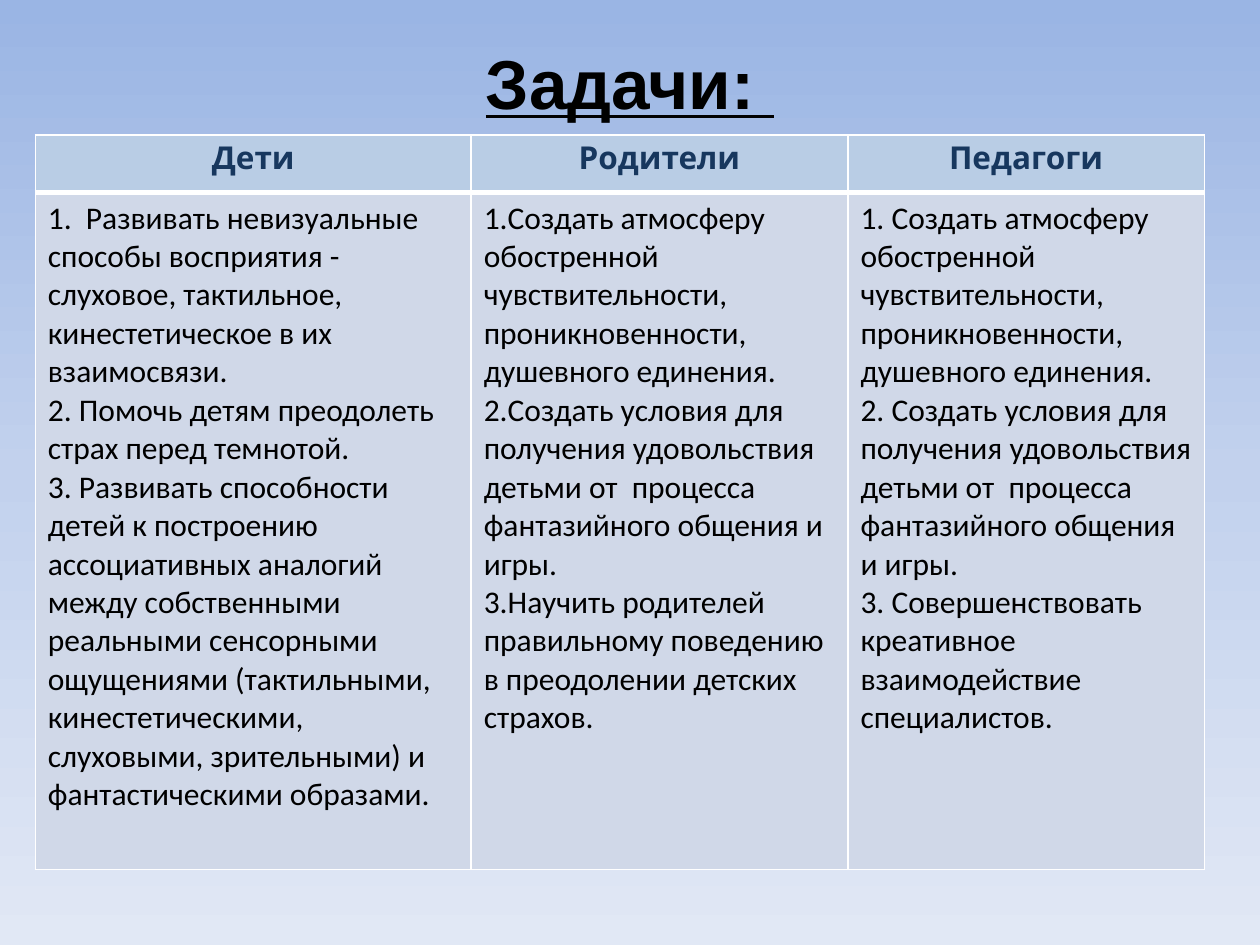
from copy import deepcopy
from dataclasses import dataclass

from lxml import etree
from pptx import Presentation
from pptx.dml.color import RGBColor
from pptx.enum.text import MSO_ANCHOR, PP_ALIGN
from pptx.oxml.ns import qn
from pptx.slide import Slide
from pptx.table import _Cell
from pptx.text.text import _Paragraph
from pptx.util import Inches, Pt

CENTER, LEFT = PP_ALIGN.CENTER, PP_ALIGN.LEFT
MIDDLE = MSO_ANCHOR.MIDDLE
STOPS = [(0, "9AB5E4"), (0.5, "C2D1ED"), (1, "E1E8F5")]
HEADS, BODIES = 0.46, 5.37


@dataclass
class Style:
    font: str
    size: float
    color: str
    bold: bool = False
    line: bool = False
    align: PP_ALIGN = LEFT


@dataclass
class Column:
    head: str
    width: float
    tasks: list[str]
    auto: bool = False


TITLE = Style("Arial", 39.6, "000000", True, True, CENTER)
HEAD = Style("Comic Neue", 18, "17375E", True, align=CENTER)
BODY = Style("Calibri", 18, "000000")

MOOD = ("Создать атмосферу обостренной чувствительности, "
        "проникновенности, душевного единения.")
PLAY = ("Создать условия для получения удовольствия детьми от  процесса "
        "фантазийного общения и игры.")
COLUMNS = [
    Column("Дети", 3.46, [
        "1.  Развивать невизуальные способы восприятия - слуховое, "
        "тактильное, кинестетическое в их взаимосвязи.",
        "2. Помочь детям преодолеть страх перед темнотой.",
        "3. Развивать способности детей к построению ассоциативных аналогий "
        "между собственными реальными сенсорными ощущениями (тактильными, "
        "кинестетическими, слуховыми, зрительными) и фантастическими "
        "образами."]),
    Column("Родители", 2.99, [
        MOOD, PLAY,
        "Научить родителей правильному поведению в преодолении детских "
        "страхов."], auto=True),
    Column("Педагоги", 2.83, [
        f"1. {MOOD}", f"2. {PLAY}",
        "3. Совершенствовать креативное взаимодействие специалистов."]),
]


def rgb(code: str) -> RGBColor:
    return RGBColor.from_string(code)


def write(para: _Paragraph, text: str, style: Style) -> None:
    para.alignment = style.align
    run = para.add_run()
    run.text = text
    font = run.font
    font.name, font.size = style.font, Pt(style.size)
    font.bold, font.underline = style.bold, style.line
    font.color.rgb = rgb(style.color)


def number(para: _Paragraph) -> None:
    props = para._p.get_or_add_pPr()
    props.set("marL", "0")
    props.set("indent", str(Inches(-0.38)))
    etree.SubElement(props, qn("a:buAutoNum"), type="arabicPeriod")


def edge(cell: _Cell, top: float, base: float) -> None:
    props = cell._tc.get_or_add_tcPr()
    for side, width in (("L", 1), ("R", 1), ("T", top), ("B", base)):
        line = etree.SubElement(props, qn(f"a:ln{side}"), w=str(Pt(width)))
        fill = etree.SubElement(line, qn("a:solidFill"))
        etree.SubElement(fill, qn("a:srgbClr"), val="FFFFFF")


def paint(cell: _Cell, code: str) -> None:
    cell.fill.solid()
    cell.fill.fore_color.rgb = rgb(code)


def shade(slide: Slide) -> None:
    fill = slide.background.fill
    fill.gradient()
    fill.gradient_angle = 270
    stops = slide.element.find(f".//{qn('a:gsLst')}")
    stops.append(deepcopy(stops[-1]))
    for stop, (place, code) in zip(fill.gradient_stops, STOPS):
        stop.position = place
        stop.color.rgb = rgb(code)


def head(slide: Slide) -> None:
    box = slide.shapes.add_textbox(
        Inches(0.5), Inches(0.3), Inches(9), Inches(0.69))
    frame = box.text_frame
    frame.word_wrap = True
    frame.vertical_anchor = MIDDLE
    write(frame.paragraphs[0], "Задачи: ", TITLE)


def grid(slide: Slide) -> None:
    width = sum(col.width for col in COLUMNS)
    table = slide.shapes.add_table(
        2, len(COLUMNS), Inches(0.28), Inches(1.07),
        Inches(width), Inches(HEADS + BODIES)).table
    table.horz_banding = False
    for row, height in zip(table.rows, (HEADS, BODIES)):
        row.height = Inches(height)
    for index, col in enumerate(COLUMNS):
        table.columns[index].width = Inches(col.width)
        top, body = table.cell(0, index), table.cell(1, index)
        edge(top, 1, 3)
        paint(top, "B9CDE5")
        write(top.text_frame.paragraphs[0], col.head, HEAD)
        edge(body, 3, 1)
        paint(body, "D0D8E8")
        frame = body.text_frame
        for order, task in enumerate(col.tasks):
            para = frame.add_paragraph() if order else frame.paragraphs[0]
            write(para, task, BODY)
            if col.auto:
                number(para)


def main() -> None:
    """Build the slide of tasks for children, parents and teachers."""
    deck = Presentation()
    deck.slide_width, deck.slide_height = Inches(10), Inches(7.5)
    slide = deck.slides.add_slide(deck.slide_layouts[6])
    shade(slide)
    head(slide)
    grid(slide)
    deck.save("out.pptx")


if __name__ == "__main__":
    main()
